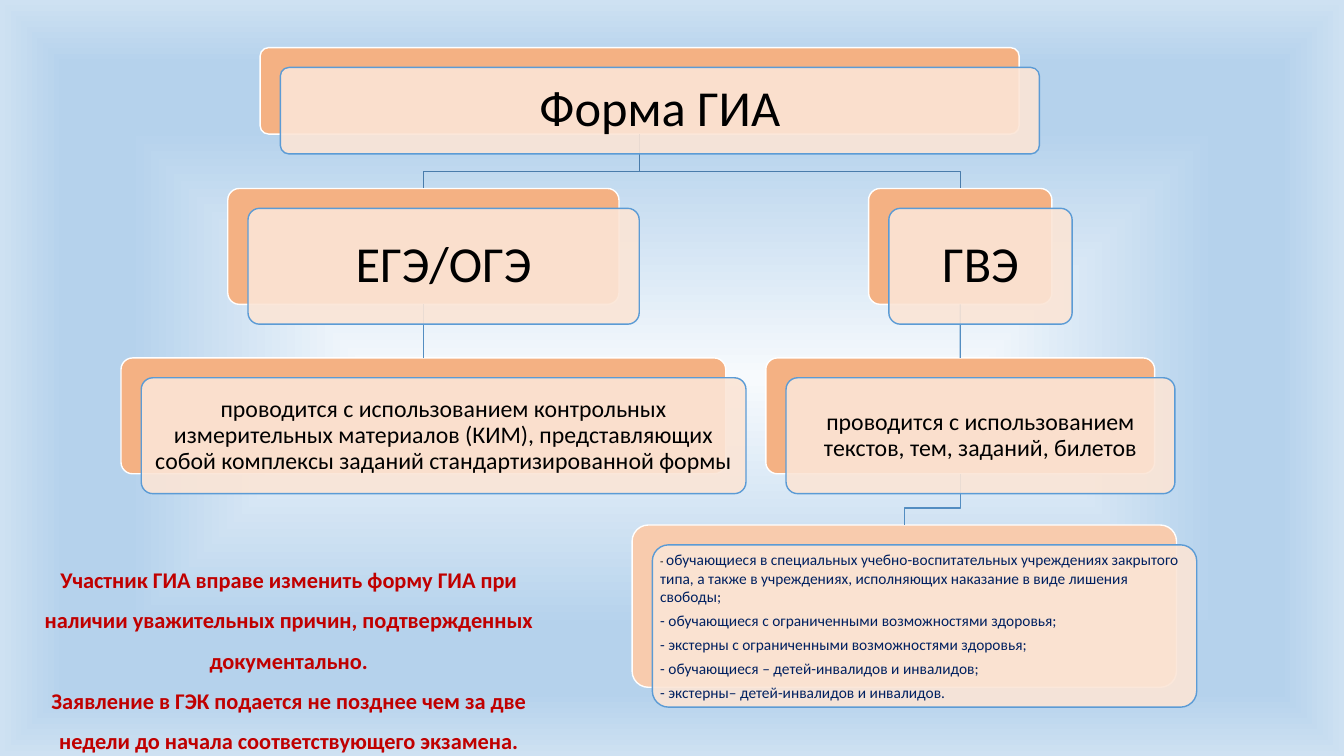
from dataclasses import dataclass

from pptx import Presentation
from pptx.dml.color import RGBColor
from pptx.enum.shapes import MSO_CONNECTOR, MSO_SHAPE
from pptx.enum.text import MSO_ANCHOR, MSO_AUTO_SIZE, PP_ALIGN
from pptx.oxml import parse_xml
from pptx.oxml.ns import qn
from pptx.util import Cm, Pt

FONT = "Calibri"
BLACK = RGBColor(0x00, 0x00, 0x00)
WHITE = RGBColor(0xFF, 0xFF, 0xFF)
RED = RGBColor(0xC0, 0x00, 0x00)
NAVY = RGBColor(0x00, 0x20, 0x60)
ORANGE = RGBColor(0xF4, 0xB1, 0x83)
PALE_ORANGE = RGBColor(0xF8, 0xCB, 0xAD)
CREAM = RGBColor(0xFB, 0xE5, 0xD6)
BLUE = RGBColor(0x5B, 0x9B, 0xD5)
UPPER_LINK = RGBColor(0x49, 0x7C, 0xAB)
LOWER_LINK = RGBColor(0x53, 0x8D, 0xC1)
BACKGROUND_STOPS = [(0, RGBColor(0xF7, 0xFA, 0xFD)), (66, RGBColor(0xB5, 0xD2, 0xEC)),
                    (83, RGBColor(0xB5, 0xD2, 0xEC)), (100, RGBColor(0xCE, 0xE1, 0xF2))]

CARD_SHIFT_X, CARD_SHIFT_Y = Cm(0.51), Cm(0.5)
BEND_ABOVE_CHILD = Cm(0.43)

NOTICE = ["Участник ГИА вправе изменить форму ГИА при наличии уважительных причин, "
          "подтвержденных документально.",
          "Заявление в ГЭК подается не позднее чем за две недели до начала "
          "соответствующего экзамена."]
CATEGORIES = [
    "обучающиеся в специальных учебно-воспитательных учреждениях закрытого типа, "
    "а также в учреждениях, исполняющих наказание в виде лишения свободы;",
    "- обучающиеся с ограниченными возможностями здоровья;",
    "- экстерны с ограниченными возможностями здоровья;",
    "- обучающиеся – детей-инвалидов и инвалидов;",
    "- экстерны– детей-инвалидов и инвалидов.",
]


@dataclass
class Node:
    """Box of the hierarchy: centre, top, width and height in centimetres."""
    centre: float
    top: float
    width: float
    height: float
    lines: list
    size: int = 17
    inset: float = 0.18
    fill: RGBColor = ORANGE


FORM = Node(16.12, 1.2, 19.13, 2.18, ["Форма ГИА"], 36, 0.38)
EGE = Node(10.67, 4.75, 9.86, 2.92, ["ЕГЭ/ОГЭ"], 36, 0.38)
GVE = Node(24.2, 4.75, 4.62, 2.92, ["ГВЭ"], 36, 0.38)
EGE_RULE = Node(10.67, 9.02, 15.24, 2.92, [
    "проводится с использованием контрольных измерительных материалов (КИМ), "
    "представляющих собой комплексы заданий стандартизированной формы"])
GVE_RULE = Node(24.2, 9.02, 9.8, 2.92, [
    "проводится с использованием текстов, тем, заданий, билетов"])
GVE_LIST = Node(22.79, 13.23, 13.72, 4.09, CATEGORIES, 11, 0.08, PALE_ORANGE)
NODES = [FORM, EGE, EGE_RULE, GVE, GVE_RULE, GVE_LIST]


def set_background(slide):
    stops = "".join(f'<a:gs pos="{position * 1000}"><a:srgbClr val="{color}"/></a:gs>'
                    for position, color in BACKGROUND_STOPS)
    slide.element.cSld.insert(0, parse_xml(
        '<p:bg xmlns:p="http://schemas.openxmlformats.org/presentationml/2006/main" '
        'xmlns:a="http://schemas.openxmlformats.org/drawingml/2006/main"><p:bgPr>'
        f'<a:gradFill rotWithShape="1"><a:gsLst>{stops}</a:gsLst><a:path path="shape">'
        '<a:fillToRect l="50000" t="50000" r="50000" b="50000"/></a:path></a:gradFill>'
        '<a:effectLst/></p:bgPr></p:bg>'))


def style_line(line, color):
    line.color.rgb = color
    line.width = Pt(1)


def write_notice(title):
    title.left, title.top, title.width, title.height = Cm(0.69), Cm(17.96), Cm(13.18), Cm(1.17)
    frame = title.text_frame
    frame.word_wrap = True
    frame.auto_size = MSO_AUTO_SIZE.NONE
    frame.vertical_anchor = MSO_ANCHOR.BOTTOM
    paragraph = frame.paragraphs[0]
    paragraph.alignment = PP_ALIGN.CENTER
    paragraph.line_spacing = 1.5
    for index, sentence in enumerate(NOTICE):
        if index:
            paragraph.add_line_break()
        paragraph.add_run().text = sentence
    font = paragraph.font
    font.name, font.size, font.bold = FONT, Pt(16), True
    font.color.rgb = RED
    for run in paragraph.runs:
        run.font.size = Pt(16)


def add_box(slide, node, fill, border, shift_x=0, shift_y=0):
    box = slide.shapes.add_shape(
        MSO_SHAPE.ROUNDED_RECTANGLE, Cm(node.centre - node.width / 2) + shift_x,
        Cm(node.top) + shift_y, Cm(node.width), Cm(node.height))
    box.adjustments[0] = 0.1
    box.shadow.inherit = False
    box.fill.solid()
    box.fill.fore_color.rgb = fill
    style_line(box.line, border)
    return box


def add_card(slide, node):
    """Translucent card with the text, shifted from its backing box."""
    card = add_box(slide, node, CREAM, BLUE, CARD_SHIFT_X, CARD_SHIFT_Y)
    color = card.fill._xPr.find(qn("a:solidFill"))[0]
    color.append(color.makeelement(qn("a:alpha"), {"val": "90000"}))
    frame = card.text_frame
    frame.word_wrap = True
    frame.vertical_anchor = MSO_ANCHOR.MIDDLE
    frame.margin_left = frame.margin_right = Cm(node.inset)
    frame.margin_top = frame.margin_bottom = Cm(node.inset)
    is_list = len(node.lines) > 1
    for index, line in enumerate(node.lines):
        paragraph = frame.paragraphs[0] if index == 0 else frame.add_paragraph()
        paragraph.alignment = PP_ALIGN.LEFT if is_list else PP_ALIGN.CENTER
        paragraph.line_spacing = 1.0 if is_list else 0.9
        paragraph.space_after = Pt(node.size * 0.35)
        paragraph.font.name = FONT
        paragraph.font.size = Pt(node.size)
        paragraph.font.color.rgb = NAVY if is_list else BLACK
        if is_list and index == 0:
            dash = paragraph.add_run()
            dash.text = "- "
            dash.font.size = Pt(8)
            dash.font.color.rgb = BLACK
        paragraph.add_run().text = line


def add_straight_link(slide, parent, child, color):
    link = slide.shapes.add_connector(MSO_CONNECTOR.STRAIGHT, 0, 0, 0, 0)
    link.begin_connect(parent, 2)
    link.end_connect(child, 0)
    style_line(link.line, color)
    properties = link.element.spPr
    properties.append(properties.makeelement(qn("a:effectLst"), {}))


def add_bent_link(slide, parent, child, color):
    start_x, end_x = (box.left + box.width // 2 for box in (parent, child))
    bend_y = child.top - BEND_ABOVE_CHILD
    outline = slide.shapes.build_freeform(start_x, parent.top + parent.height)
    outline.add_line_segments(
        [(start_x, bend_y), (end_x, bend_y), (end_x, child.top)], close=False)
    link = outline.convert_to_shape()
    link.shadow.inherit = False
    link.fill.background()
    style_line(link.line, color)


def main():
    presentation = Presentation()
    presentation.slide_width, presentation.slide_height = Cm(33.87), Cm(19.05)
    slide = presentation.slides.add_slide(presentation.slide_layouts[5])
    set_background(slide)
    write_notice(slide.shapes.title)

    # Backing boxes
    form, ege, ege_rule, gve, gve_rule, gve_list = [
        add_box(slide, node, node.fill, WHITE) for node in NODES]

    # Links between levels
    add_bent_link(slide, form, ege, UPPER_LINK)
    add_bent_link(slide, form, gve, UPPER_LINK)
    add_straight_link(slide, ege, ege_rule, LOWER_LINK)
    add_straight_link(slide, gve, gve_rule, LOWER_LINK)
    add_bent_link(slide, gve_rule, gve_list, LOWER_LINK)

    # Text cards in front
    for node in NODES:
        add_card(slide, node)

    presentation.save("out.pptx")


if __name__ == "__main__":
    main()
